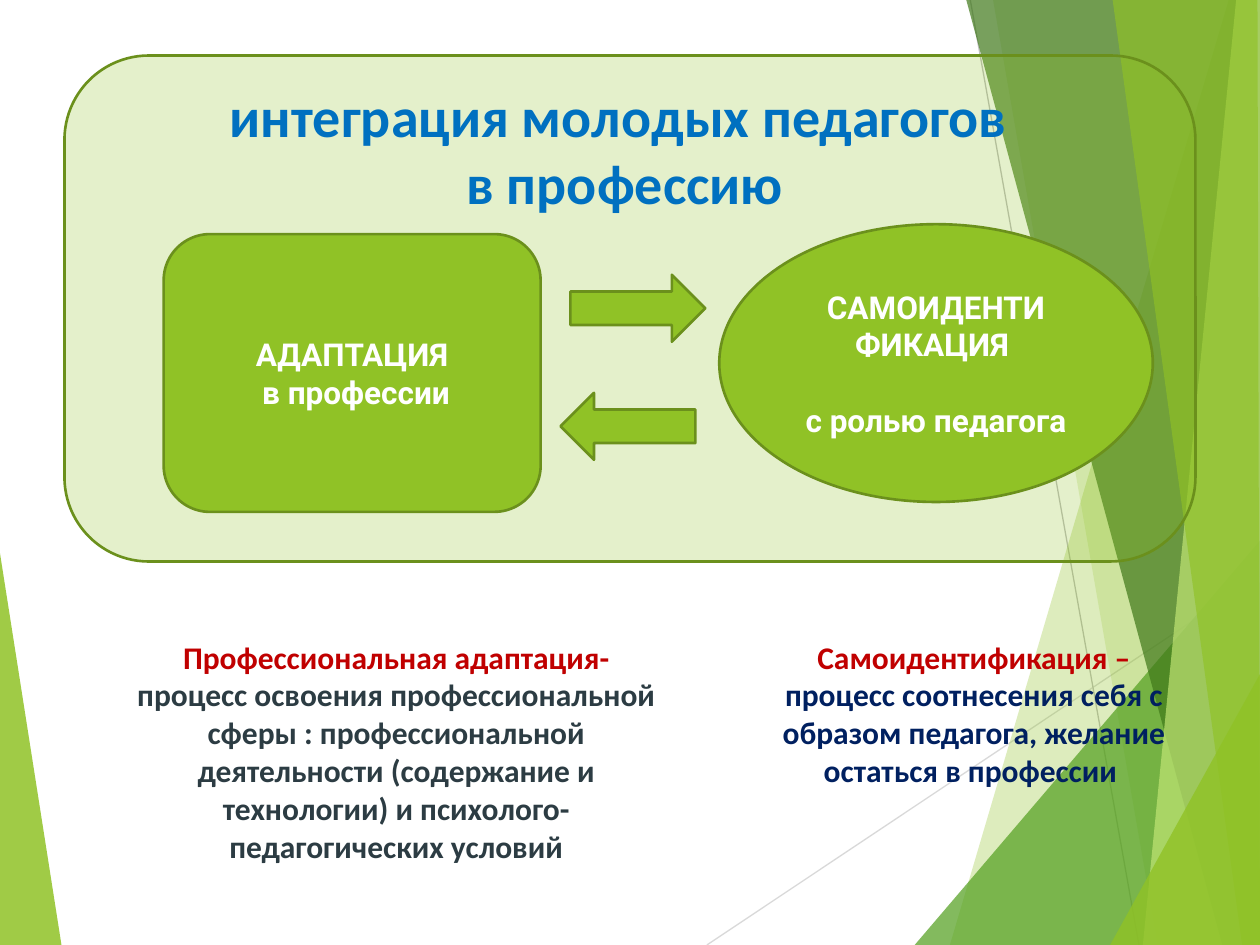
import pptx
import pptx.dml.color
import pptx.enum.shapes
import pptx.enum.text
import pptx.oxml
import pptx.oxml.ns
import pptx.util

Cm = pptx.util.Cm
Pt = pptx.util.Pt
SHAPE = pptx.enum.shapes.MSO_SHAPE

COLORS = {
    "green": "90C226", "outline": "6B901C", "leaf": "54A021",
    "forest": "3F7819", "lime": "C0E474", "white": "FFFFFF",
    "blue": "0070C0", "red": "C00000", "slate": "2C3C43", "navy": "002060",
    "light_gray": "D9D9D9", "gray": "BFBFBF",
}
WIDTH, HEIGHT = 25.4, 19.05

# Fill colour, opacity in percent, corner points in cm
FACETS = [
    ("green", 30, [(24.77, 0), (19.15, HEIGHT), (WIDTH, HEIGHT), (WIDTH, 0)]),
    ("green", 20, [(20.02, 0), (23.34, HEIGHT), (WIDTH, HEIGHT), (WIDTH, 0)]),
    ("leaf", 72, [(18.44, HEIGHT), (WIDTH, 10.9), (WIDTH, HEIGHT)]),
    ("forest", 70, [(19.48, 0), (24.64, HEIGHT), (WIDTH, HEIGHT), (WIDTH, 0)]),
    ("lime", 70, [(24.92, 0), (23.04, HEIGHT), (WIDTH, HEIGHT), (WIDTH, 0)]),
    ("green", 65, [(22.43, 0), (25.04, HEIGHT), (WIDTH, HEIGHT), (25.35, 0)]),
    ("green", 80, [(22.38, HEIGHT), (WIDTH, 13.59), (WIDTH, HEIGHT)]),
]
LEFT_FACET = ("green", 85, [(0, 11.15), (1.24, HEIGHT), (0, HEIGHT)])
THIN_LINES = [
    ("light_gray", (14.25, HEIGHT), (WIDTH, 11.61)),
    ("gray", (19.56, 0), (22.96, HEIGHT)),
]


def rgb(name):
    return pptx.dml.color.RGBColor.from_string(COLORS[name])


def paint(shape, fill, opacity=100, outline=None):
    shape.shadow.inherit = False
    shape.fill.solid()
    shape.fill.fore_color.rgb = rgb(fill)
    if opacity < 100:
        color = shape.fill._xPr.find(".//" + pptx.oxml.ns.qn("a:srgbClr"))
        alpha = pptx.oxml.parse_xml(
            f'<a:alpha {pptx.oxml.ns.nsdecls("a")} val="{opacity * 1000}"/>')
        color.append(alpha)
    if outline:
        shape.line.color.rgb = rgb(outline)
        shape.line.width = Pt(1.5)
    else:
        shape.line.fill.background()


def write(shape, paragraphs, font, size):
    """Each paragraph is a list of (text, colour) runs."""
    frame = shape.text_frame
    frame.word_wrap = True
    for index, runs in enumerate(paragraphs):
        paragraph = frame.paragraphs[0] if index == 0 else frame.add_paragraph()
        paragraph.alignment = pptx.enum.text.PP_ALIGN.CENTER
        for text, color in runs:
            run = paragraph.add_run()
            run.text = text
            for name, value in {"name": font, "size": Pt(size), "bold": True}.items():
                setattr(run.font, name, value)
            run.font.color.rgb = rgb(color)


def add_block(slide, kind, box, opacity=100, lines=()):
    shape = slide.shapes.add_shape(kind, *map(Cm, box))
    paint(shape, "green", opacity, "outline")
    if lines:
        write(shape, [[(line, "white")] for line in lines], "Roboto", 18)
        shape.text_frame.vertical_anchor = pptx.enum.text.MSO_ANCHOR.MIDDLE
    return shape


def add_text(slide, box, paragraphs, size):
    shape = slide.shapes.add_textbox(*map(Cm, box))
    write(shape, paragraphs, "Calibri", size)


def add_facet(slide, left, top, color, opacity, points):
    corners = [(Cm(left + x), Cm(top + y)) for x, y in points]
    builder = slide.shapes.build_freeform(*corners[0])
    builder.add_line_segments(corners[1:], close=True)
    paint(builder.convert_to_shape(), color, opacity)


def add_background(slide, left, top):
    add_facet(slide, left, top, *LEFT_FACET)
    for color, (x1, y1), (x2, y2) in THIN_LINES:
        line = slide.shapes.add_connector(
            pptx.enum.shapes.MSO_CONNECTOR.STRAIGHT,
            Cm(left + x1), Cm(top + y1), Cm(left + x2), Cm(top + y2))
        line.line.color.rgb = rgb(color)
        line.line.width = Pt(0.75)
        properties = line._element.spPr
        properties.append(pptx.oxml.parse_xml(
            f'<a:effectLst {pptx.oxml.ns.nsdecls("a")}/>'))
    for facet in FACETS:
        add_facet(slide, left, top, *facet)


def add_integration_panel(slide, left, top, width, height):
    def place(x, y, w, h):
        return left + x, top + y, w, h

    add_block(slide, SHAPE.ROUNDED_RECTANGLE, (left, top, width, height), 24)
    add_text(slide, place(2, 0.4, 18.6, 3),
             [[("интеграция молодых педагогов ", "blue")],
              [("в профессию", "blue")]], 32)

    # The two processes
    add_block(slide, SHAPE.ROUNDED_RECTANGLE, place(2, 3.6, 7.6, 5.6),
              lines=("АДАПТАЦИЯ", " в профессии"))
    identity = add_block(slide, SHAPE.OVAL, place(13.2, 3.4, 8.74, 5.6),
                         lines=("САМОИДЕНТИ", "ФИКАЦИЯ ", "с ролью педагога"))
    identity.text_frame.paragraphs[-1].space_before = Pt(21.5)

    # Arrows between them
    add_block(slide, SHAPE.RIGHT_ARROW, place(10.2, 4.42, 2.72, 1.35))
    add_block(slide, SHAPE.LEFT_ARROW, place(10, 6.8, 2.72, 1.35))


def add_definition(slide, box, term, meaning, color):
    add_text(slide, box, [[(term, "red"), (meaning, color)]], 18)


def main():
    presentation = pptx.Presentation()
    presentation.slide_width = Cm(WIDTH)
    presentation.slide_height = Cm(HEIGHT)
    slide = presentation.slides.add_slide(presentation.slide_layouts[6])

    add_background(slide, 0, 0)
    add_integration_panel(slide, 1.3, 1.12, 22.8, 10.2)
    add_definition(
        slide, (2.49, 12.73, 11, 4.88), "Профессиональная адаптация- ",
        "процесс освоения профессиональной сферы : профессиональной "
        "деятельности (содержание и технологии) и психолого-педагогических "
        "условий", "slate")
    add_definition(
        slide, (15.29, 12.73, 8.69, 3.33), "Самоидентификация – ",
        "процесс соотнесения себя с образом педагога, желание остаться "
        "в профессии ", "navy")

    presentation.save("out.pptx")


if __name__ == "__main__":
    main()
